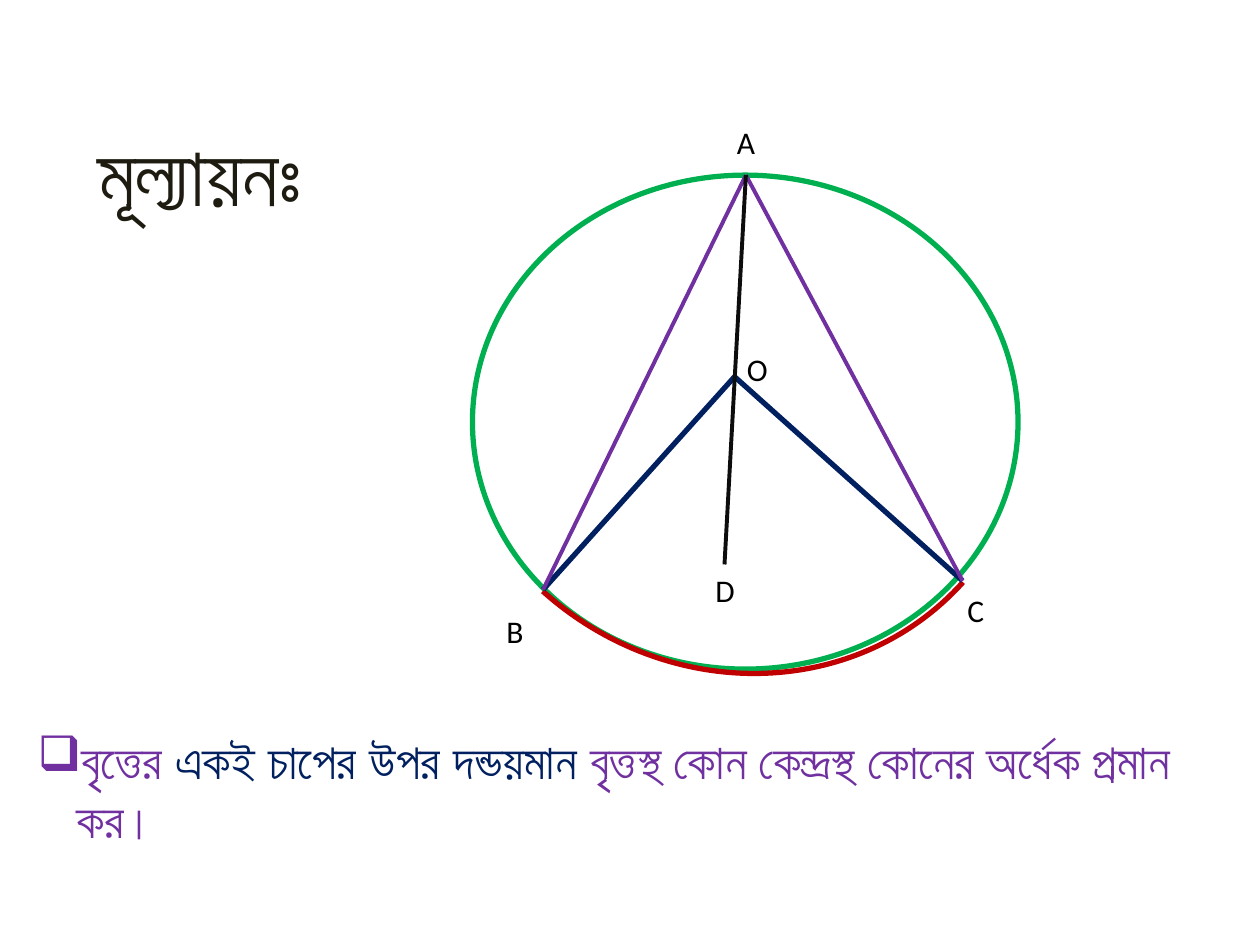
from typing import NamedTuple

import pptx
import pptx.dml.color
import pptx.enum.shapes
import pptx.enum.text
import pptx.oxml
import pptx.oxml.ns
import pptx.util

Inches = pptx.util.Inches
SHAPES = pptx.enum.shapes.MSO_SHAPE

COLORS = {
    "title": "1E1C11",
    "purple": "7030A0",
    "navy": "002060",
    "circle": "00B050",
    "arc": "C00000",
    "median": "0D0D0D",
    "label": "000000",
}


class Box(NamedTuple):
    left: float
    top: float
    width: float
    height: float


class Run(NamedTuple):
    text: str
    color: str
    bold: bool = False


class Segment(NamedTuple):
    start: str
    end: str
    color: str
    weight: float


class Label(NamedTuple):
    text: str
    box: Box


POINTS = {
    "A": (5.92, 1.39),
    "B": (4.31, 4.68),
    "C": (7.64, 4.61),
    "D": (5.75, 4.48),
    "O": (5.83, 2.99),
}
SEGMENTS = [
    Segment("O", "C", "navy", 3),
    Segment("O", "B", "navy", 3),
    Segment("A", "B", "purple", 2.25),
    Segment("A", "C", "purple", 2.25),
    Segment("A", "D", "median", 2.25),
]
LABELS = [
    Label("A", Box(5.75, 0.93, 0.33, 0.4)),
    Label("B", Box(3.92, 4.81, 0.5, 0.4)),
    Label("C", Box(7.58, 4.64, 0.25, 0.42)),
    Label("O", Box(5.83, 2.73, 0.33, 0.4)),
    Label("D", Box(5.58, 4.48, 0.33, 0.42)),
]
PROBLEM = [
    Run("বৃত্তের", "purple"),
    Run(" একই চাপের উপর দন্ডয়মান ", "navy", True),
    Run("বৃত্তস্থ কোন কেন্দ্রস্থ কোনের অর্ধেক প্রমান কর।", "purple"),
]


def rgb(name: str):
    return pptx.dml.color.RGBColor.from_string(COLORS[name])


def add_bullet(paragraph, char: str, indent: float) -> None:
    properties = paragraph._p.get_or_add_pPr()
    properties.set("marL", str(Inches(indent)))
    properties.set("indent", str(-Inches(indent)))
    bullet = pptx.oxml.parse_xml(
        f'<a:buChar {pptx.oxml.ns.nsdecls("a")} char="{char}"/>')
    properties.append(bullet)


def write_text(shape, runs: list[Run], *, size: float, font: str, bullet: str = "") -> None:
    frame = shape.text_frame
    frame.word_wrap = True
    frame.auto_size = pptx.enum.text.MSO_AUTO_SIZE.SHAPE_TO_FIT_TEXT
    frame.vertical_anchor = pptx.enum.text.MSO_ANCHOR.TOP
    paragraph = frame.paragraphs[0]
    paragraph.alignment = pptx.enum.text.PP_ALIGN.LEFT
    if bullet:
        add_bullet(paragraph, bullet, 0.31)
    for part in runs:
        run = paragraph.add_run()
        run.text = part.text
        run.font.size = pptx.util.Pt(size)
        run.font.name = font
        run.font.bold = part.bold
        run.font.color.rgb = rgb(part.color)


def add_text(slide, box: Box, runs: list[Run], **text_format) -> None:
    write_text(slide.shapes.add_textbox(*map(Inches, box)), runs, **text_format)


def add_curve(slide, preset, box: Box, color: str, rotation: float = 0) -> None:
    curve = slide.shapes.add_shape(preset, *map(Inches, box))
    curve.rotation = rotation
    curve.shadow.inherit = False
    curve.fill.background()
    curve.line.color.rgb = rgb(color)
    curve.line.width = pptx.util.Pt(3)


def add_segment(slide, segment: Segment) -> None:
    ends = POINTS[segment.start] + POINTS[segment.end]
    line = slide.shapes.add_connector(
        pptx.enum.shapes.MSO_CONNECTOR.STRAIGHT, *map(Inches, ends))
    line.line.color.rgb = rgb(segment.color)
    line.line.width = pptx.util.Pt(segment.weight)
    line._element.spPr.append(
        pptx.oxml.parse_xml(f'<a:effectLst {pptx.oxml.ns.nsdecls("a")}/>'))


def main() -> None:
    deck = pptx.Presentation()
    deck.slide_width, deck.slide_height = Inches(10), Inches(7.5)
    slide = deck.slides.add_slide(deck.slide_layouts[5])

    title = slide.shapes.title
    title.left, title.top, title.width, title.height = map(
        Inches, Box(0.67, 0.92, 2.75, 0.91))
    write_text(title, [Run("মূল্যায়নঃ", "title", True)], size=48, font="Roboto")
    add_text(slide, Box(0.2, 5.75, 9.25, 1.04), PROBLEM,
             size=28, font="Roboto", bullet="❑")

    add_curve(slide, SHAPES.OVAL, Box(3.75, 1.39, 4.33, 3.92), "circle")
    add_curve(slide, SHAPES.ARC, Box(3.55, 0.56, 4.56, 4.87), "arc", 131.9)
    for segment in SEGMENTS:
        add_segment(slide, segment)
    for label in LABELS:
        add_text(slide, label.box, [Run(label.text, "label")], size=18, font="Calibri")

    deck.save("out.pptx")


if __name__ == "__main__":
    main()
